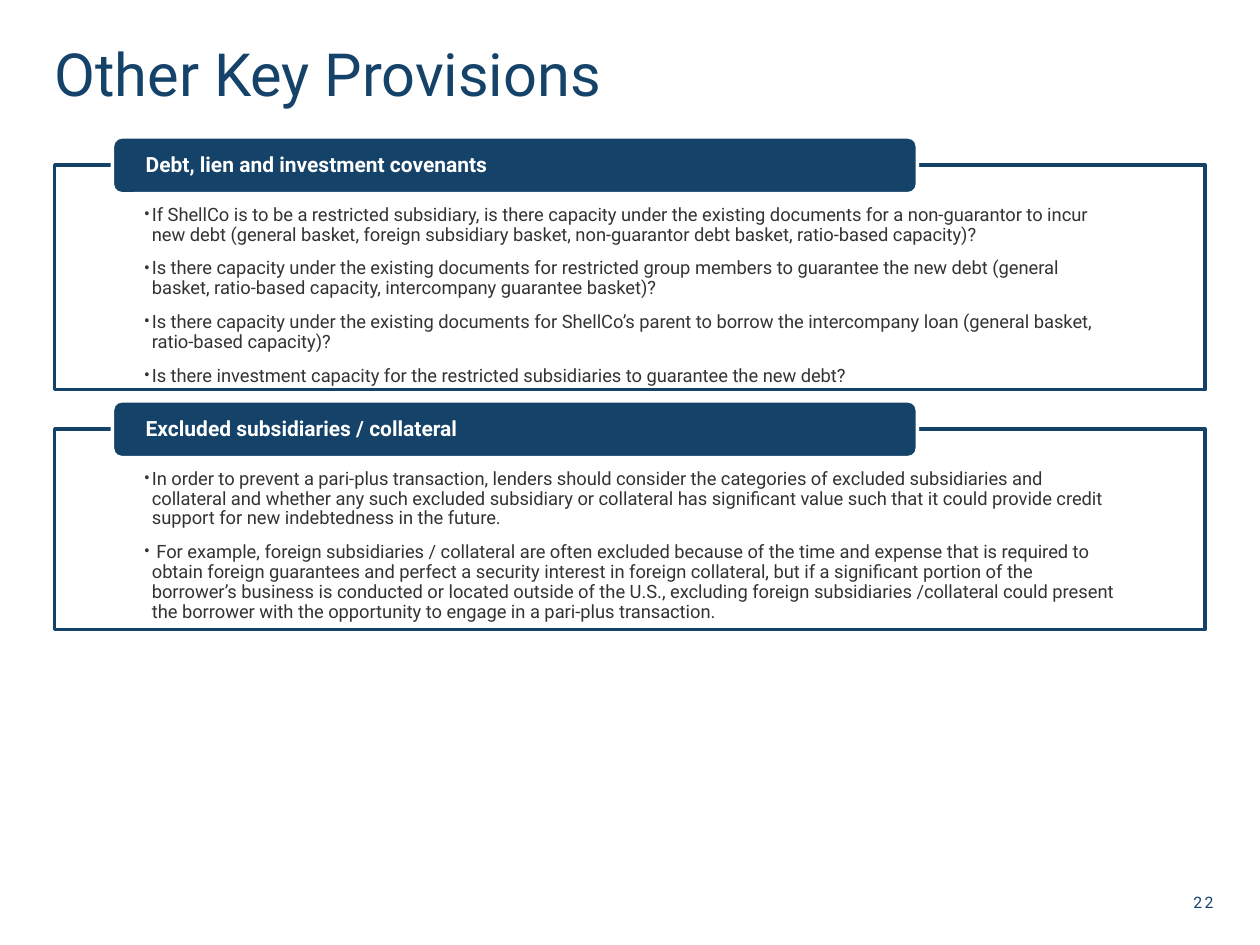
from lxml.etree import SubElement
from pptx import Presentation
from pptx.dml.color import RGBColor
from pptx.enum.shapes import MSO_SHAPE as SHAPE
from pptx.enum.text import MSO_ANCHOR as ANCHOR, PP_ALIGN as ALIGN
from pptx.oxml.ns import qn
from pptx.util import Pt

NAVY = RGBColor(0x15, 0x42, 0x69)
WHITE = RGBColor(0xFF, 0xFF, 0xFF)
GRAY = RGBColor(0x33, 0x33, 0x33)

LEFT, WIDTH = 31.25, 657.5
HEADER_LEFT, HEADER_WIDTH, HEADER_HEIGHT = 64.25, 460, 32.5
HEADER_RISE = 16.2

sections = [
    ("Debt, lien and investment covenants", 94.4, 128.25, [
        "If ShellCo is to be a restricted subsidiary, is there capacity under the existing documents for a non-guarantor to incur new debt (general basket, foreign subsidiary basket, non-guarantor debt basket, ratio-based capacity)?",
        "Is there capacity under the existing documents for restricted group members to guarantee the new debt (general basket, ratio-based capacity, intercompany guarantee basket)?",
        "Is there capacity under the existing documents for ShellCo’s parent to borrow the intercompany loan (general basket, ratio-based capacity)?",
        "Is there investment capacity for the restricted subsidiaries to guarantee the new debt?",
    ]),
    ("Excluded subsidiaries / collateral", 245.2, 114.5, [
        "In order to prevent a pari-plus transaction, lenders should consider the categories of excluded subsidiaries and collateral and whether any such excluded subsidiary or collateral has significant value such that it could provide credit support for new indebtedness in the future.",
        " For example, foreign subsidiaries / collateral are often excluded because of the time and expense that is required to obtain foreign guarantees and perfect a security interest in foreign collateral, but if a significant portion of the borrower’s business is conducted or located outside of the U.S., excluding foreign subsidiaries /collateral could present the borrower with the opportunity to engage in a pari-plus transaction.",
    ]),
]


def add_text(texts, left, top, width, height, size, color, anchor=ANCHOR.TOP,
             align=ALIGN.LEFT, bold=False, spacing=0.9, after=0, bullet=False, tracking=0):
    sp = s.shapes.add_textbox(Pt(left), Pt(top), Pt(width), Pt(height))
    tf = sp.text_frame
    tf.word_wrap = True
    tf.vertical_anchor = anchor
    tf.margin_left = tf.margin_top = tf.margin_right = tf.margin_bottom = 0
    for i, text in enumerate(texts):
        p = tf.paragraphs[0] if i == 0 else tf.add_paragraph()
        if bullet:
            p.level = 1
            pPr = p._p.get_or_add_pPr()
            pPr.set("marL", str(Pt(4.5)))
            pPr.set("indent", str(-Pt(4.5)))
            SubElement(pPr, qn("a:buFont")).set("typeface", "Roboto")
            SubElement(pPr, qn("a:buChar")).set("char", "•")
        p.alignment = align
        p.line_spacing = spacing
        p.space_after = Pt(after)
        r = p.add_run()
        r.text = text
        r.font.name = "Roboto"
        r.font.size = Pt(size)
        r.font.bold = bold
        r.font.color.rgb = color
        if tracking:
            r.font._element.set("spc", str(int(tracking * 100)))


def add_box(kind, left, top, width, height, fill, line):
    sp = s.shapes.add_shape(kind, Pt(left), Pt(top), Pt(width), Pt(height))
    sp.shadow.inherit = False
    sp.fill.solid()
    sp.fill.fore_color.rgb = fill
    sp.line.color.rgb = line
    sp.line.width = Pt(2)


prs = Presentation()
prs.slide_width, prs.slide_height = Pt(720), Pt(540)
s = prs.slides.add_slide(prs.slide_layouts[6])

add_text(["Other Key Provisions"], LEFT, 27.5, WIDTH, 44, 34, NAVY, spacing=0.85)
add_text(["22"], 666, 510.2, 27.5, 11, 9, NAVY, align=ALIGN.RIGHT, spacing=1.0, tracking=1.5)

for heading, top, height, bullets in sections:
    header_top = top - HEADER_RISE
    add_box(SHAPE.RECTANGLE, LEFT, top, WIDTH, height, WHITE, NAVY)
    add_box(SHAPE.ROUNDED_RECTANGLE, HEADER_LEFT, header_top, HEADER_WIDTH, HEADER_HEIGHT, NAVY, WHITE)
    add_text([heading], HEADER_LEFT + 19, header_top, HEADER_WIDTH - 38, HEADER_HEIGHT,
             12, WHITE, anchor=ANCHOR.MIDDLE, bold=True)
    add_text(bullets, LEFT + 51, top + 23, WIDTH - 102, height - 29.5,
             10.5, GRAY, after=8, bullet=True)

prs.save("out.pptx")
